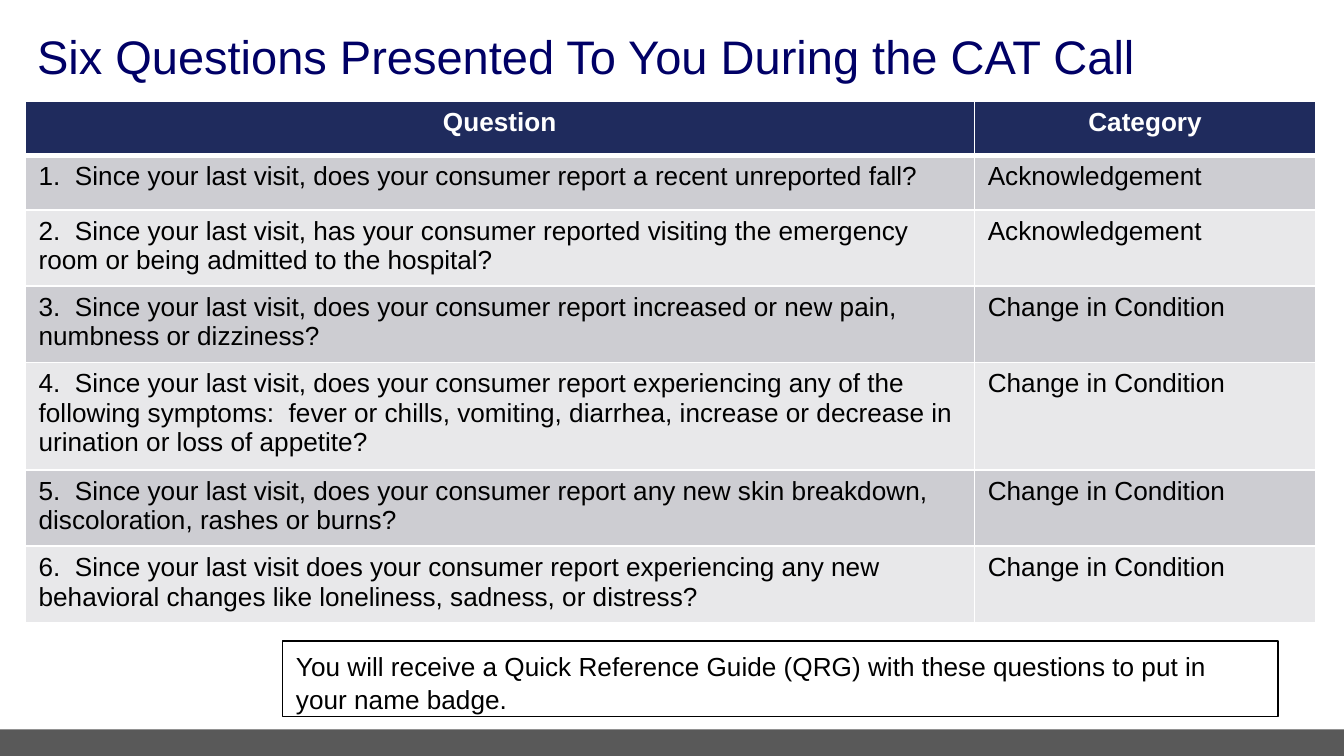
import pptx
import pptx.dml.color
import pptx.enum.shapes
import pptx.enum.text
import pptx.oxml
import pptx.oxml.ns
import pptx.util

PX = 9525
ALIGN = pptx.enum.text.PP_ALIGN
ANCHOR = pptx.enum.text.MSO_ANCHOR
RECTANGLE = pptx.enum.shapes.MSO_SHAPE.RECTANGLE


def color(value):
    return pptx.dml.color.RGBColor.from_string(value)


def write(frame, text, size=14, fill="000000", bold=False, align=ALIGN.LEFT, spacing=None):
    frame.word_wrap = True
    paragraph = frame.paragraphs[0]
    paragraph.alignment = align
    paragraph.line_spacing = spacing
    run = paragraph.add_run()
    run.text = text
    run.font.name = "Arial"
    run.font.size = pptx.util.Pt(size)
    run.font.bold = bold
    run.font.color.rgb = color(fill)


presentation = pptx.Presentation()
presentation.slide_width = 960 * PX
presentation.slide_height = 540 * PX
slide = presentation.slides.add_slide(presentation.slide_layouts[6])

footer = slide.shapes.add_shape(RECTANGLE, 0, 521 * PX, 960 * PX, 19 * PX)
footer.shadow.inherit = False
footer.fill.solid()
footer.fill.fore_color.rgb = color("595959")
footer.line.fill.background()

title = slide.shapes.add_textbox(17 * PX, 13 * PX, 922 * PX, 54 * PX)
title.text_frame.vertical_anchor = ANCHOR.MIDDLE
write(title.text_frame, "Six Questions Presented To You During the CAT Call", size=25.2, fill="000066")

rows = [
    ("Question", "Category"),
    ("1.  Since your last visit, does your consumer report a recent unreported fall?", "Acknowledgement"),
    ("2.  Since your last visit, has your consumer reported visiting the emergency room "
     "or being admitted to the hospital?", "Acknowledgement"),
    ("3.  Since your last visit, does your consumer report increased or new pain, "
     "numbness or dizziness?", "Change in Condition"),
    ("4.  Since your last visit, does your consumer report experiencing any of the following "
     "symptoms:  fever or chills, vomiting, diarrhea, increase or decrease in urination "
     "or loss of appetite?", "Change in Condition"),
    ("5.  Since your last visit, does your consumer report any new skin breakdown, "
     "discoloration, rashes or burns?", "Change in Condition"),
    ("6.  Since your last visit does your consumer report experiencing any new behavioral "
     "changes like loneliness, sadness, or distress?", "Change in Condition"),
]
row_height = 39
table = slide.shapes.add_table(
    len(rows), 2, 18 * PX, 72 * PX, 922 * PX, row_height * len(rows) * PX
).table
for column, width in zip(table.columns, (678, 244)):
    column.width = width * PX

for row_index, row in enumerate(rows):
    table.rows[row_index].height = row_height * PX
    header = row_index == 0
    band = "1F2B5D" if header else ("E8E8EA", "CDCDD2")[row_index % 2]
    for column_index, text in enumerate(row):
        cell = table.cell(row_index, column_index)
        properties = cell._tc.get_or_add_tcPr()
        for side in "LRTB":
            thick = (header and side == "B") or (row_index == 1 and side == "T")
            width = pptx.util.Pt(3 if thick else 1)
            properties.append(pptx.oxml.parse_xml(
                f'<a:ln{side} {pptx.oxml.ns.nsdecls("a")} w="{width}">'
                f'<a:solidFill><a:srgbClr val="FFFFFF"/></a:solidFill></a:ln{side}>'
            ))
        cell.fill.solid()
        cell.fill.fore_color.rgb = color(band)
        if header:
            write(cell.text_frame, text, fill="FFFFFF", bold=True, align=ALIGN.CENTER)
        else:
            write(cell.text_frame, text)

note = slide.shapes.add_shape(RECTANGLE, 202 * PX, 458 * PX, 711 * PX, 54 * PX)
note.shadow.inherit = False
note.fill.background()
note.line.color.rgb = color("000000")
note.line.width = pptx.util.Pt(0.75)
note.text_frame.vertical_anchor = ANCHOR.TOP
write(
    note.text_frame,
    "You will receive a Quick Reference Guide (QRG) with these questions to put in your name badge.",
    spacing=1.07,
)

presentation.save("out.pptx")
